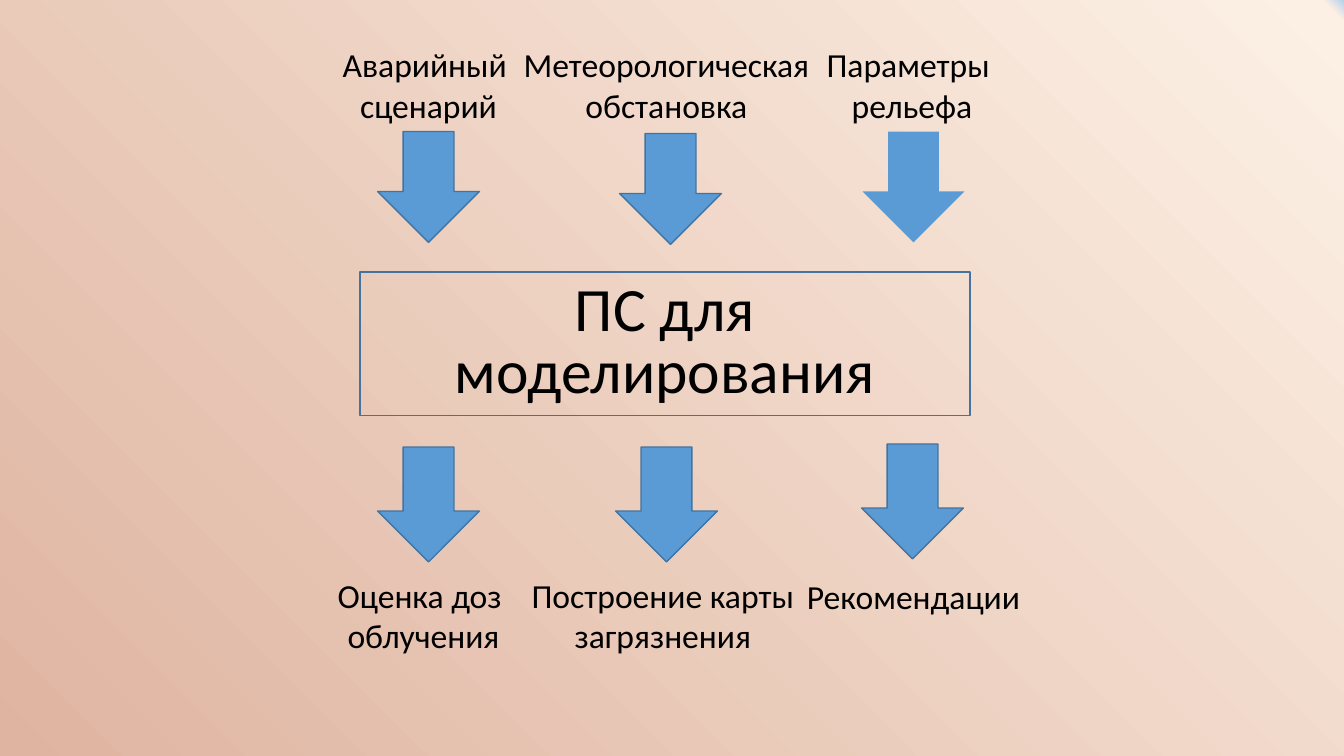
from copy import deepcopy

from pptx import Presentation
from pptx.dml.color import RGBColor
from pptx.enum.shapes import MSO_SHAPE
from pptx.enum.text import MSO_ANCHOR, MSO_AUTO_SIZE, PP_ALIGN
from pptx.util import Inches, Pt

FONT = "Calibri"
BLUE, OUTLINE, BLACK = "5B9BD5", "43739E", "000000"
BACKGROUND_STOPS = [(0, "DFB4A1"), (0.99, "FCF0E4"), (1, "B5D2EC")]
ARROW_THICKNESS = 1.01

# Per column: label lines, label box (left, top, width, height),
# arrow (left, top), whether the arrow is outlined
INPUTS = [
    (["Аварийный ", "сценарий"], (3.29, 0.39, 1.92, 0.91), (3.7, 1.35), True),
    (["Метеорологическая", "обстановка"], (5.08, 0.39, 3.06, 0.91), (6.1, 1.37), True),
    (["Параметры ", "рельефа"], (8.09, 0.39, 1.91, 0.91), (8.51, 1.35), False),
]
OUTPUTS = [
    (["Оценка доз ", "облучения"], (3.24, 5.65, 1.92, 0.91), (3.68, 4.5), True),
    (["Построение карты", "загрязнения"], (5.16, 5.65, 2.83, 0.91), (6.04, 4.5), True),
    (["Рекомендации"], (7.89, 5.66, 2.34, 0.5), (8.48, 4.47), True),
]


def color(hex_text):
    return RGBColor.from_string(hex_text)


def inches(box):
    return [Inches(value) for value in box]


def paint_background(page):
    fill = page.background.fill
    fill.gradient()
    fill.gradient_angle = 45
    # The default gradient has two stops; a third is added in XML
    stop_list = page.background._cSld.find(".//{*}gsLst")
    stop_list.append(deepcopy(stop_list[-1]))
    for stop, (position, hex_text) in zip(fill.gradient_stops, BACKGROUND_STOPS):
        stop.position = position
        stop.color.rgb = color(hex_text)


def write(frame, lines, size, line_spacing=1.0):
    for index, line in enumerate(lines):
        para = frame.paragraphs[0] if index == 0 else frame.add_paragraph()
        para.text = line
        para.alignment = PP_ALIGN.CENTER
        para.line_spacing = line_spacing
        para.font.name = FONT
        para.font.size = Pt(size)
        para.font.color.rgb = color(BLACK)


def add_outlined(page, kind, box, outlined=True):
    shape = page.shapes.add_shape(kind, *inches(box))
    shape.shadow.inherit = False
    if outlined:
        shape.line.color.rgb = color(OUTLINE)
        shape.line.width = Pt(1)
    else:
        shape.line.fill.background()
    return shape


def add_arrow(page, box, outlined):
    arrow = add_outlined(page, MSO_SHAPE.RIGHT_ARROW, box, outlined)
    arrow.rotation = 90
    arrow.fill.solid()
    arrow.fill.fore_color.rgb = color(BLUE)


def add_label(page, lines, box):
    frame = page.shapes.add_textbox(*inches(box)).text_frame
    frame.word_wrap = False
    frame.auto_size = MSO_AUTO_SIZE.SHAPE_TO_FIT_TEXT
    write(frame, lines, 24)


def add_flow(page, columns, arrow_length):
    for lines, label_box, corner, outlined in columns:
        add_arrow(page, (*corner, arrow_length, ARROW_THICKNESS), outlined)
        add_label(page, lines, label_box)


def add_process(page, text, box):
    process = add_outlined(page, MSO_SHAPE.FLOWCHART_PROCESS, box)
    process.fill.background()
    frame = process.text_frame
    frame.word_wrap = True
    frame.vertical_anchor = MSO_ANCHOR.MIDDLE
    # Tight spacing keeps both lines inside the border
    frame.margin_top = frame.margin_bottom = 0
    write(frame, [text], 44, line_spacing=0.85)


def main():
    deck = Presentation()
    deck.slide_width, deck.slide_height = Inches(13.33), Inches(7.5)
    page = deck.slides.add_slide(deck.slide_layouts[6])
    paint_background(page)
    # Inputs above, the program in the middle, outputs below
    add_flow(page, INPUTS, 1.1)
    add_process(page, "ПС для моделирования", (3.57, 2.7, 6.05, 1.42))
    add_flow(page, OUTPUTS, 1.14)
    deck.save("out.pptx")


if __name__ == "__main__":
    main()
